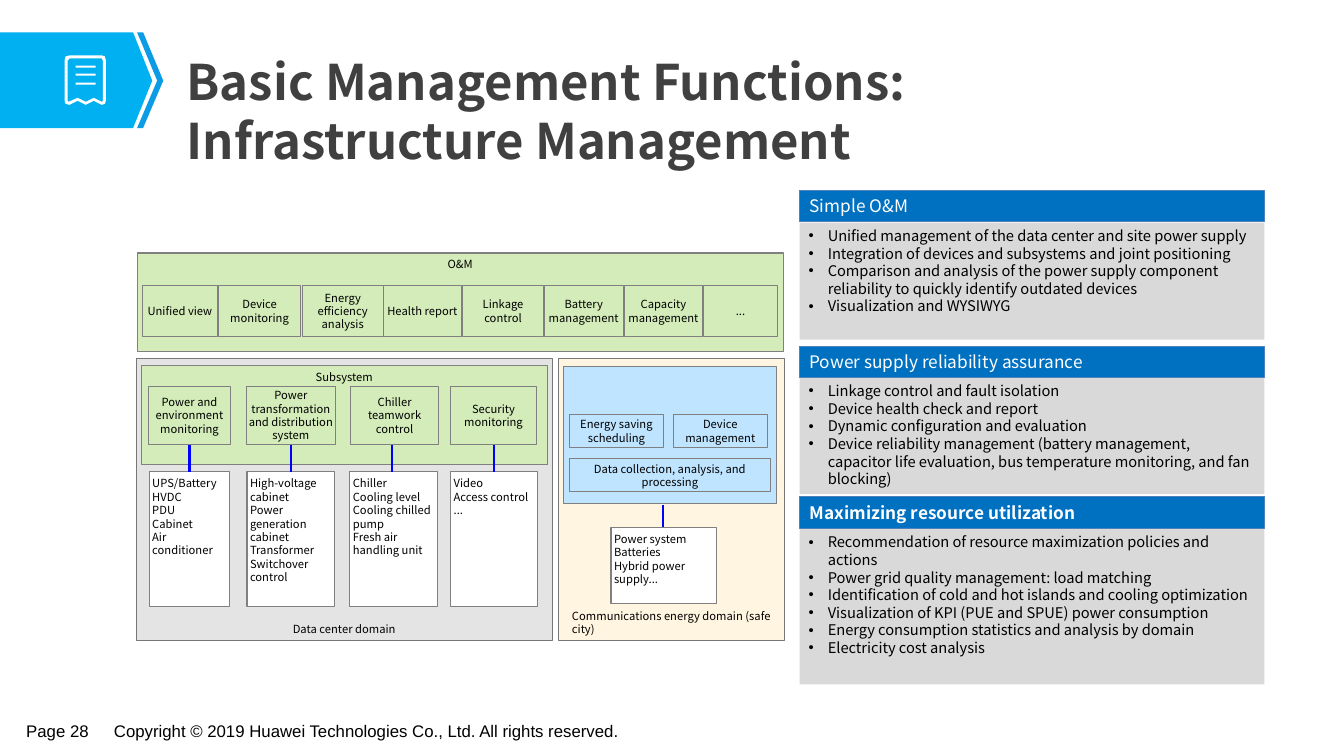
from pptx import Presentation
from pptx.dml.color import RGBColor
from pptx.enum.shapes import MSO_CONNECTOR, MSO_SHAPE
from pptx.enum.text import MSO_ANCHOR, MSO_AUTO_SIZE, PP_ALIGN
from pptx.oxml.ns import qn
from pptx.util import Pt
from lxml.etree import SubElement

PX = 9144  # one px is a hundredth of an inch
SANS, ARIAL = "Noto Sans CJK SC", "Arial"
HEX = {
    "white": "FFFFFF", "black": "000000", "dark": "404040",
    "cyan": "00B0F0", "sky": "0B9CE5", "head": "0070C0", "rim": "4F81BD",
    "panel": "D9D9D9", "gray": "E4E4E4", "cream": "FFF5E0",
    "green": "D3ECB9", "pale": "BFE4FF", "edge": "808080",
    "frame": "777777", "link": "0000FF",
}
SLIM = (9, 4, 9, 4)
CELL = (2, 5, 2, 5)
LIST = (3, 5, 2, 5)

TASKS = [  # left, width, text
    (141, 75, "Unified view"), (217, 81, "Device monitoring"),
    (300, 80, "Energy efficiency analysis"), (380, 78, "Health report"),
    (459, 80, "Linkage control"), (540, 78, "Battery management"),
    (619, 78, "Capacity management"), (698, 73, "..."),
]
SYSTEMS = [  # upper box, lower box, line, texts
    ((147, 82), (148, 80), 188, "Power and environment monitoring",
     ["UPS/Battery", "HVDC", "PDU", "Cabinet", "Air conditioner"]),
    ((244, 89), (245, 87), 289, "Power transformation and distribution system",
     ["High-voltage cabinet", "Power generation cabinet", "Transformer",
      "Switchover control"]),
    ((348, 87), (347, 87), 389, "Chiller teamwork control",
     ["Chiller", "Cooling level", "Cooling chilled pump",
      "Fresh air handling unit"]),
    ((447, 85), (447, 86), 490, "Security monitoring",
     ["Video", "Access control", "..."]),
]
ENERGY = [
    (565, 411, 93, "Energy saving scheduling"),
    (668, 411, 93, "Device management"),
    (565, 455, 199, "Data collection, analysis, and processing"),
]
PANELS = [  # head top, body top, body height, bold, head, points
    (189, 221, 116, False, "Simple O&M",
     ["Unified management of the data center and site power supply",
      "Integration of devices and subsystems and joint positioning",
      "Comparison and analysis of the power supply component reliability "
      "to quickly identify outdated devices",
      "Visualization and WYSIWYG"]),
    (344, 375, 115, False, "Power supply reliability assurance",
     ["Linkage control and fault isolation",
      "Device health check and report",
      "Dynamic configuration and evaluation",
      "Device reliability management (battery management, capacitor life "
      "evaluation, bus temperature monitoring, and fan blocking)"]),
    (493, 525, 154, True, "Maximizing resource utilization",
     ["Recommendation of resource maximization policies and actions",
      "Power grid quality management: load matching",
      "Identification of cold and hot islands and cooling optimization",
      "Visualization of KPI (PUE and SPUE) power consumption",
      "Energy consumption statistics and analysis by domain",
      "Electricity cost analysis"]),
]


def color(name):
    return RGBColor.from_string(HEX[name])


def scale(*nums):
    return [n * PX for n in nums]


def write(frame, lines, size, tone="black", font=SANS, bold=False,
          align=PP_ALIGN.LEFT, anchor=MSO_ANCHOR.TOP, pad=SLIM, dots=False):
    frame.word_wrap = True
    frame.vertical_anchor = anchor
    (frame.margin_left, frame.margin_top,
     frame.margin_right, frame.margin_bottom) = scale(*pad)
    for i, line in enumerate(lines):
        para = frame.add_paragraph() if i else frame.paragraphs[0]
        para.alignment = align
        if dots:
            props = para._p.get_or_add_pPr()
            props.set("marL", str(19 * PX))
            props.set("indent", str(-19 * PX))
            SubElement(props, qn("a:buFont"), typeface=ARIAL)
            SubElement(props, qn("a:buChar"), char="•")
        run = para.add_run()
        run.text = line
        run.font.size = Pt(size)
        run.font.name = font
        run.font.bold = bold
        run.font.color.rgb = color(tone)


def paint(shape, fill, edge=None):
    shape.shadow.inherit = False
    if fill:
        shape.fill.solid()
        shape.fill.fore_color.rgb = color(fill)
    else:
        shape.fill.background()
    if edge:
        shape.line.color.rgb = color(edge)
        shape.line.width = Pt(0.75)
    else:
        shape.line.fill.background()


def box(shapes, area, fill, edge="edge", lines=(), size=8, **style):
    shape = shapes.add_shape(MSO_SHAPE.RECTANGLE, *scale(*area))
    paint(shape, fill, edge)
    write(shape.text_frame, lines, size, **style)
    return shape


def cell(shapes, area, fill, text):
    box(shapes, area, fill, lines=[text], align=PP_ALIGN.CENTER,
        anchor=MSO_ANCHOR.MIDDLE, pad=CELL)


def domain(shapes, area, fill, text):
    shape = box(shapes, area, fill, "frame", [text], anchor=MSO_ANCHOR.BOTTOM)
    shape.element.txBody.bodyPr.set("anchorCtr", "1")


def link(shapes, x, top, end):
    line = shapes.add_connector(MSO_CONNECTOR.STRAIGHT, *scale(x, top, x, end))
    line.line.color.rgb = color("link")
    line.line.width = Pt(1.5)
    SubElement(line.element.spPr, qn("a:effectLst"))


def outline(shapes, fill, *loops):
    pen = shapes.build_freeform(*loops[0][0], scale=PX)
    for i, loop in enumerate(loops):
        if i:
            pen.move_to(*loop[0])
        pen.add_line_segments(loop[1:], close=True)
    paint(pen.convert_to_shape(), fill)


def note(shapes, area, text):
    frame = shapes.add_textbox(*scale(*area)).text_frame
    write(frame, [text], 12, font=ARIAL)
    frame.word_wrap = False
    frame.auto_size = MSO_AUTO_SIZE.SHAPE_TO_FIT_TEXT


def badge(shapes):
    outline(shapes, "cyan",
            [(132, 127), (0, 127), (0, 32), (132, 32), (151, 80)])
    outline(shapes, "sky", [(142, 32), (136, 32), (156, 80), (136, 127),
                            (142, 127), (162, 80)])
    icon = shapes.add_group_shape().shapes
    outline(icon, "white",
            [(69, 55), (101, 55), (104, 56), (105, 60), (105, 100), (104, 103),
             (101, 104), (93, 100), (85, 104), (77, 100), (69, 104), (65, 103),
             (64, 100), (64, 60), (65, 56)],
            [(69, 58), (101, 58), (102, 60), (102, 100), (101, 101), (93, 97),
             (85, 101), (77, 97), (68, 101), (67, 100), (67, 60)])
    outline(icon, "white", *([(75, y), (95, y), (95, y + 2), (75, y + 2)]
                             for y in (65, 73, 82)))


def chart(shapes):
    # Domains and their areas
    domain(shapes, (135, 356, 413, 279), "gray", "Data center domain")
    domain(shapes, (554, 356, 224, 279), "cream",
           "Communications energy domain (safe city)")
    for area, text in (((140, 363, 403, 98), "Subsystem"),
                       ((136, 251, 641, 98), "O&M")):
        box(shapes, area, "green", lines=[text], align=PP_ALIGN.CENTER)
    # O&M tasks
    for x, w, text in TASKS:
        cell(shapes, (x, 283, w, 51), "green", text)
    # Subsystems and their devices
    for (x, w), (left, wide), mid, text, parts in SYSTEMS:
        cell(shapes, (x, 383, w, 58), None, text)
        box(shapes, (left, 468, wide, 134), "white", lines=parts, pad=LIST)
        link(shapes, mid, 441, 468)
    # Energy domain
    link(shapes, 658, 501, 523)
    box(shapes, (559, 364, 211, 136), "pale")
    for x, y, w, text in ENERGY:
        cell(shapes, (x, y, w, 33), "pale", text)
    box(shapes, (606, 523, 105, 76), "white", pad=LIST,
        lines=["Power system", "Batteries", "Hybrid power supply..."])


def panel(shapes, top, body, high, bold, head, points):
    box(shapes, (793, body, 461, high), "panel", None, points, 10.5, dots=True)
    bar = box(shapes, (793, top, 461, 31), "head", "rim", [head], 12.3,
              tone="white", bold=bold, pad=(10, 5, 10, 5))
    bar.text_frame.auto_size = MSO_AUTO_SIZE.SHAPE_TO_FIT_TEXT


def main():
    deck = Presentation()
    deck.slide_width, deck.slide_height = scale(1333, 750)
    slide = deck.slides.add_slide(deck.slide_layouts[5])
    shapes = slide.shapes
    # Title
    title = shapes.title
    title.left, title.top, title.width, title.height = scale(174, 45, 1075, 70)
    write(title.text_frame,
          ["Basic Management Functions: Infrastructure Management"],
          35, "dark", bold=True, pad=(11, 6, 11, 6))
    title.text_frame.auto_size = MSO_AUTO_SIZE.NONE
    # Footer and badge
    note(shapes, (17, 711, 82, 29), "Page 28")
    note(shapes, (104, 711, 527, 29), "Copyright © 2019 Huawei Technologies "
         "Co., Ltd. All rights reserved.")
    badge(shapes)
    # Diagram and panels
    chart(shapes.add_group_shape().shapes)
    for item in PANELS:
        panel(shapes, *item)
    deck.save("out.pptx")


if __name__ == "__main__":
    main()
